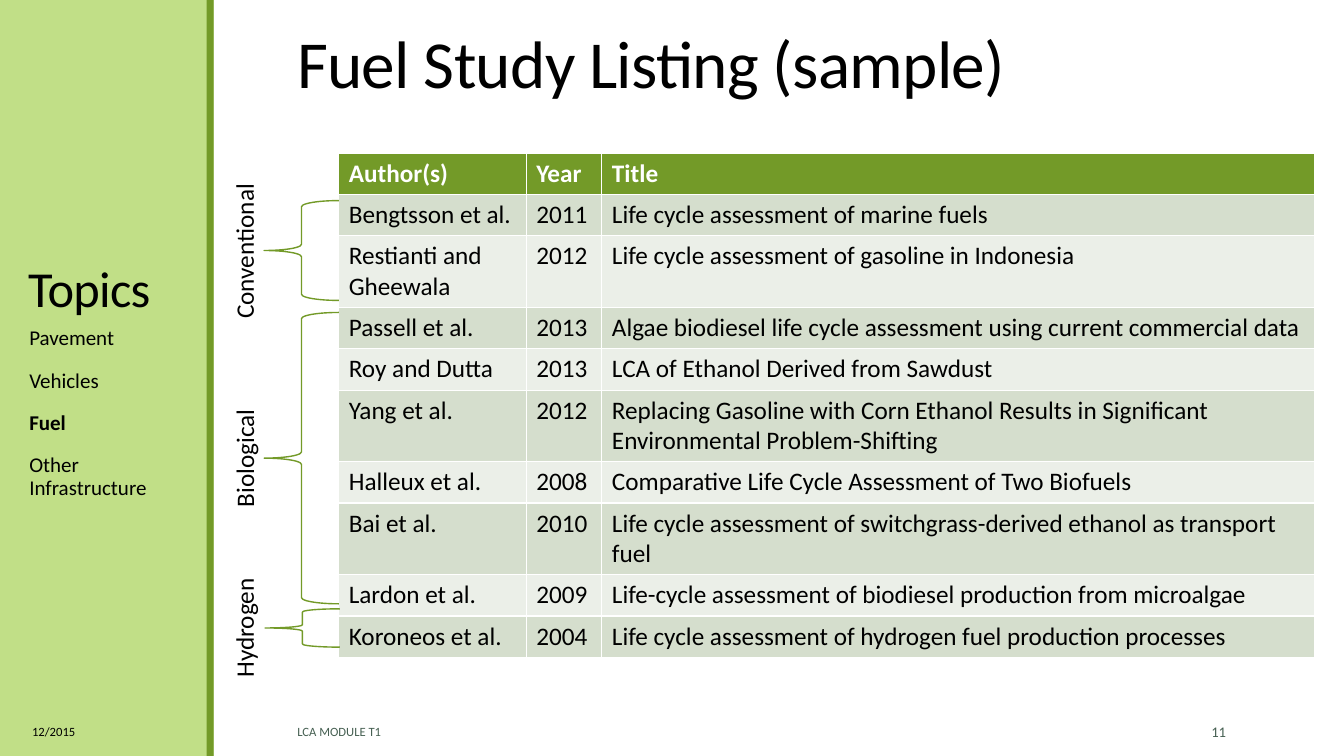
"""Build the fuel study listing slide with its topics sidebar."""
from dataclasses import dataclass

from lxml.etree import SubElement
from pptx import Presentation
from pptx.dml.color import RGBColor
from pptx.enum.shapes import MSO_SHAPE as Preset
from pptx.enum.text import MSO_ANCHOR as Anchor, MSO_AUTO_SIZE as AutoSize, PP_ALIGN as Align
from pptx.oxml.ns import qn
from pptx.shapes.base import BaseShape
from pptx.slide import Slide
from pptx.text.text import TextFrame, _Paragraph as Paragraph
from pptx.util import Emu, Pt

PX = 9144
FONT = "Calibri"
BLACK = RGBColor(0x00, 0x00, 0x00)
WHITE = RGBColor(0xFF, 0xFF, 0xFF)
SLATE = RGBColor(0x45, 0x5F, 0x51)
LIME = RGBColor(0xC1, 0xDF, 0x87)
GREEN = RGBColor(0x73, 0x9A, 0x28)
SAGE = RGBColor(0xD5, 0xDE, 0xCD)
MIST = RGBColor(0xEB, 0xEF, 0xE8)


@dataclass(frozen=True)
class Box:
    """Position and size in px, 100 to the inch."""
    left: int
    top: int
    width: int
    height: int

    def emu(self) -> tuple[Emu, Emu, Emu, Emu]:
        """Return the four lengths in EMU."""
        return (Emu(self.left * PX), Emu(self.top * PX),
                Emu(self.width * PX), Emu(self.height * PX))


@dataclass(frozen=True)
class Label:
    """A one-line text box."""
    text: str
    box: Box
    size: float
    color: RGBColor = BLACK
    align: Align = Align.LEFT
    anchor: Anchor = Anchor.MIDDLE
    tracking: int = 0
    line_spacing: float = 1.0


@dataclass(frozen=True)
class FuelGroup:
    """A brace over table rows with its sideways name."""
    name: str
    brace: Box
    name_box: Box


@dataclass(frozen=True)
class Study:
    """One row of the listing."""
    author: str
    year: str
    title: str


BARS = [(Box(-3, 0, 215, 750), LIME), (Box(205, 0, 7, 750), GREEN)]
SIDEBAR_TITLE = Label("Topics", Box(18, 70, 163, 250), 36, anchor=Anchor.BOTTOM,
                      tracking=-50, line_spacing=0.85)
TOPICS_BOX = Box(19, 320, 163, 370)
TOPICS = ["Pavement", "Vehicles", "Fuel", "Other Infrastructure"]
CURRENT_TOPIC = "Fuel"
LABELS = [
    Label("Fuel Study Listing (sample)", Box(285, 9, 788, 97), 48, anchor=Anchor.BOTTOM,
          tracking=-50, line_spacing=0.85),
    Label("12/2015", Box(22, 706, 162, 40), 9),
    Label("LCA MODULE T1", Box(285, 706, 748, 40), 9, SLATE),
    Label("11", Box(1083, 706, 143, 40), 10.5, SLATE, Align.RIGHT),
]
GROUPS = [
    FuelGroup("Conventional", Box(262, 199, 74, 99), Box(164, 228, 156, 40)),
    FuelGroup("Biological", Box(262, 310, 74, 289), Box(183, 434, 118, 40)),
    FuelGroup("Hydrogen", Box(263, 604, 74, 38), Box(182, 602, 120, 40)),
]
COLUMN_WIDTHS = [186, 75, 707]
ROW_HEIGHT = 41
HEADINGS = Study("Author(s)", "Year", "Title")
STUDIES = [
    Study("Bengtsson et al.", "2011", "Life cycle assessment of marine fuels"),
    Study("Restianti and Gheewala", "2012", "Life cycle assessment of gasoline in Indonesia"),
    Study("Passell et al.", "2013",
          "Algae biodiesel life cycle assessment using current commercial data"),
    Study("Roy and Dutta", "2013", "LCA of Ethanol Derived from Sawdust"),
    Study("Yang et al.", "2012", "Replacing Gasoline with Corn Ethanol Results in "
          "Significant Environmental Problem-Shifting"),
    Study("Halleux et al.", "2008", "Comparative Life Cycle Assessment of Two Biofuels"),
    Study("Bai et al.", "2010",
          "Life cycle assessment of switchgrass-derived ethanol as transport fuel"),
    Study("Lardon et al.", "2009",
          "Life-cycle assessment of biodiesel production from microalgae"),
    Study("Koroneos et al.", "2004",
          "Life cycle assessment of hydrogen fuel production processes"),
]


def add_run(paragraph: Paragraph, text: str, size: float, color: RGBColor = BLACK,
            bold: bool = False, tracking: int = 0) -> None:
    """Append one formatted run."""
    run = paragraph.add_run()
    run.text = text
    run.font.name = FONT
    run.font.size = Pt(size)
    run.font.bold = bold
    run.font.color.rgb = color
    if tracking:
        run.font._element.set("spc", str(tracking))


def place(shape: BaseShape, box: Box) -> None:
    """Move and size a shape."""
    shape.left, shape.top, shape.width, shape.height = box.emu()


def fill_label(frame: TextFrame, label: Label) -> None:
    """Write a label into a text frame."""
    frame.word_wrap = True
    frame.auto_size = AutoSize.NONE
    frame.vertical_anchor = label.anchor
    line = frame.paragraphs[0]
    line.alignment = label.align
    line.line_spacing = label.line_spacing
    add_run(line, label.text, label.size, label.color, tracking=label.tracking)


def add_sidebar(slide: Slide) -> None:
    """Draw the bars, then the topics title and list on top of them."""
    for box, color in BARS:
        bar = slide.shapes.add_shape(Preset.RECTANGLE, *box.emu())
        bar.shadow.inherit = False
        bar.fill.solid()
        bar.fill.fore_color.rgb = color
        bar.line.fill.background()
    heading, topics = slide.shapes.title, slide.placeholders[1]
    for placeholder in (heading, topics):
        slide.shapes._spTree.append(placeholder._element)
    place(heading, SIDEBAR_TITLE.box)
    fill_label(heading.text_frame, SIDEBAR_TITLE)
    place(topics, TOPICS_BOX)
    frame = topics.text_frame
    frame.auto_size = AutoSize.NONE
    for index, topic in enumerate(TOPICS):
        item = frame.add_paragraph() if index else frame.paragraphs[0]
        properties = item._p.get_or_add_pPr()
        properties.set("marL", "0")
        properties.set("indent", "0")
        SubElement(properties, qn("a:buNone"))
        item.line_spacing = 0.9
        item.space_before = Pt(12 if index else 0)
        item.space_after = Pt(2)
        add_run(item, topic, 15, bold=topic == CURRENT_TOPIC)


def add_listing(slide: Slide) -> None:
    """Add the table of studies."""
    rows = [HEADINGS, *STUDIES]
    box = Box(336, 152, sum(COLUMN_WIDTHS), ROW_HEIGHT * len(rows))
    listing = slide.shapes.add_table(len(rows), len(COLUMN_WIDTHS), *box.emu()).table
    for column, width in zip(listing.columns, COLUMN_WIDTHS):
        column.width = Emu(width * PX)
    for index, study in enumerate(rows):
        is_header = index == 0
        shade = GREEN if is_header else SAGE if index % 2 else MIST
        values = (study.author, study.year, study.title)
        for cell, value in zip(listing.rows[index].cells, values):
            cell.fill.solid()
            cell.fill.fore_color.rgb = shade
            add_run(cell.text_frame.paragraphs[0], value, 18,
                    WHITE if is_header else BLACK, is_header)


def add_group(slide: Slide, group: FuelGroup) -> None:
    """Draw a brace and its sideways name."""
    brace = slide.shapes.add_shape(Preset.LEFT_BRACE, *group.brace.emu())
    brace.shadow.inherit = False
    brace.fill.background()
    brace.line.color.rgb = GREEN
    brace.line.width = Pt(1)
    name = slide.shapes.add_textbox(*group.name_box.emu())
    name.rotation = 270
    name.text_frame.word_wrap = False
    name.text_frame.auto_size = AutoSize.SHAPE_TO_FIT_TEXT
    add_run(name.text_frame.paragraphs[0], group.name, 18)


def main() -> None:
    """Build and save the slide."""
    deck = Presentation()
    deck.slide_width, deck.slide_height = Emu(1333 * PX), Emu(750 * PX)
    slide = deck.slides.add_slide(deck.slide_layouts[1])
    add_sidebar(slide)
    add_listing(slide)
    for group in GROUPS:
        add_group(slide, group)
    for label in LABELS:
        fill_label(slide.shapes.add_textbox(*label.box.emu()).text_frame, label)
    deck.save("out.pptx")


if __name__ == "__main__":
    main()
